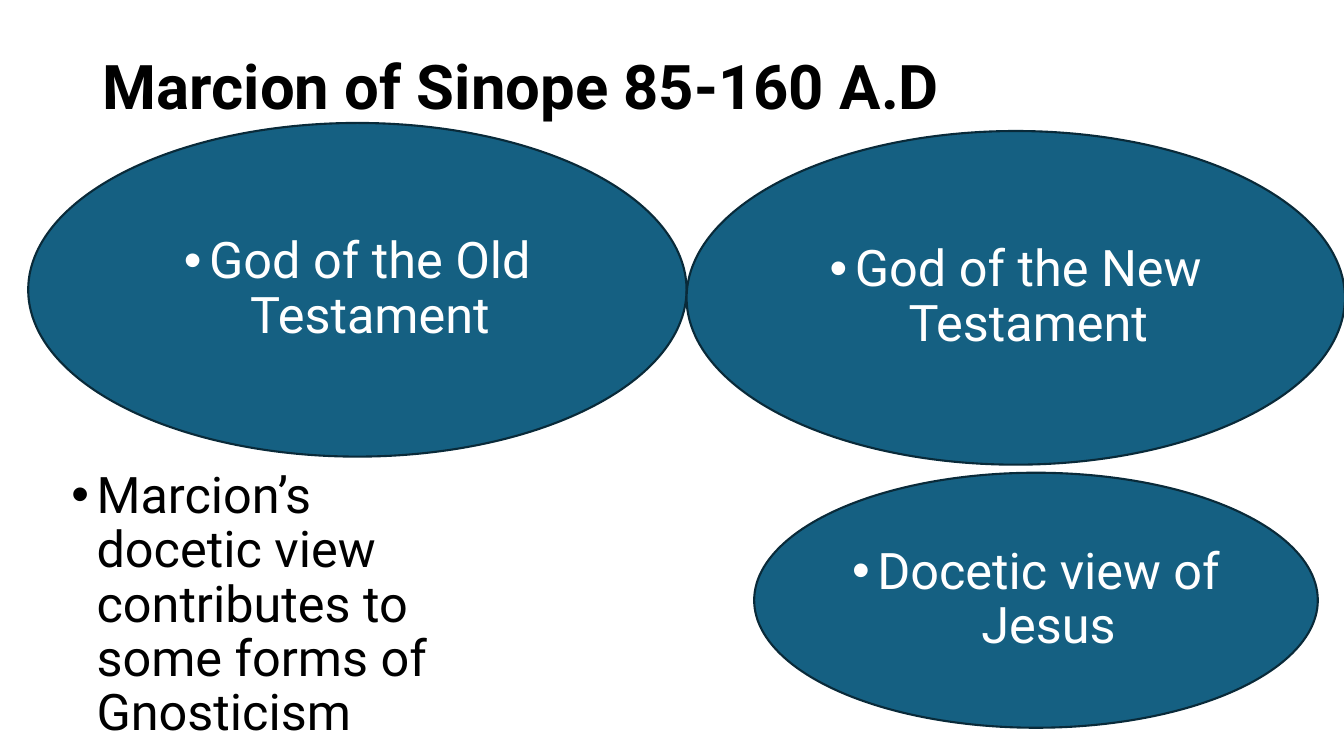
import lxml.etree
import pptx
import pptx.dml.color
import pptx.enum.shapes
import pptx.enum.text
import pptx.oxml.ns
import pptx.util

Inches = pptx.util.Inches
Pt = pptx.util.Pt
RGBColor = pptx.dml.color.RGBColor
PP_ALIGN = pptx.enum.text.PP_ALIGN
MSO_ANCHOR = pptx.enum.text.MSO_ANCHOR
qn = pptx.oxml.ns.qn

BLACK = RGBColor(0x00, 0x00, 0x00)
WHITE = RGBColor(0xFF, 0xFF, 0xFF)
OVAL_FILL = RGBColor(0x15, 0x60, 0x82)
OVAL_LINE = RGBColor(0x09, 0x2A, 0x39)
FONT = "Roboto"


def place(shape, box):
    shape.left, shape.top, shape.width, shape.height = (Inches(n) for n in box)


def write_text(shape, text, size, color, align, anchor, bulleted=True, bold=False):
    frame = shape.text_frame
    frame.word_wrap = True
    frame.auto_size = pptx.enum.text.MSO_AUTO_SIZE.NONE
    frame.vertical_anchor = anchor
    frame.text = text
    paragraph = frame.paragraphs[0]
    paragraph.alignment = align
    paragraph.line_spacing = 0.9
    paragraph.space_before = Pt(0)
    if bulleted:
        properties = paragraph._p.get_or_add_pPr()
        properties.set("marL", str(Inches(0.25)))
        properties.set("indent", str(Inches(-0.25)))
        lxml.etree.SubElement(properties, qn("a:buFont"), typeface="Arial")
        lxml.etree.SubElement(properties, qn("a:buChar"), char="•")
    paragraph.font.name = FONT
    paragraph.font.size = Pt(size)
    paragraph.font.bold = bold
    paragraph.font.color.rgb = color


def add_title(slide, box):
    title = slide.shapes.title
    place(title, box)
    write_text(title, "Marcion of Sinope 85-160 A.D", 44, BLACK,
               PP_ALIGN.LEFT, MSO_ANCHOR.MIDDLE, bulleted=False, bold=True)


def style_oval(oval, text):
    oval.fill.solid()
    oval.fill.fore_color.rgb = OVAL_FILL
    oval.line.color.rgb = OVAL_LINE
    oval.line.width = Pt(1.5)
    write_text(oval, text, 36, WHITE, PP_ALIGN.CENTER, MSO_ANCHOR.MIDDLE)


def add_body_oval(slide, box, text):
    """Give the body placeholder an oval outline."""
    body = slide.placeholders[1]
    place(body, box)
    geometry = lxml.etree.SubElement(body._element.spPr, qn("a:prstGeom"), prst="ellipse")
    lxml.etree.SubElement(geometry, qn("a:avLst"))
    style_oval(body, text)


def add_oval(slide, box, text):
    oval = slide.shapes.add_shape(pptx.enum.shapes.MSO_SHAPE.OVAL,
                                  *(Inches(n) for n in box))
    oval.shadow.inherit = False
    style_oval(oval, text)


def add_gnosticism_note(slide, box):
    note = slide.shapes.add_textbox(*(Inches(n) for n in box))
    write_text(note, "Marcion’s docetic view contributes to some forms of Gnosticism",
               36, BLACK, PP_ALIGN.LEFT, MSO_ANCHOR.TOP)


def main():
    presentation = pptx.Presentation()
    presentation.slide_width = Inches(13.33)
    presentation.slide_height = Inches(7.5)
    slide = presentation.slides.add_slide(presentation.slide_layouts[1])
    add_title(slide, (0.92, 0.4, 11.5, 0.98))
    add_body_oval(slide, (0.28, 1.22, 6.53, 3.31), "God of the Old Testament")
    add_oval(slide, (6.81, 1.3, 6.53, 3.31), "God of the New Testament")
    add_oval(slide, (7.48, 4.69, 5.59, 2.53), "Docetic view of Jesus")
    add_gnosticism_note(slide, (0.61, 4.61, 3.8, 3.05))
    presentation.save("out.pptx")


if __name__ == "__main__":
    main()
